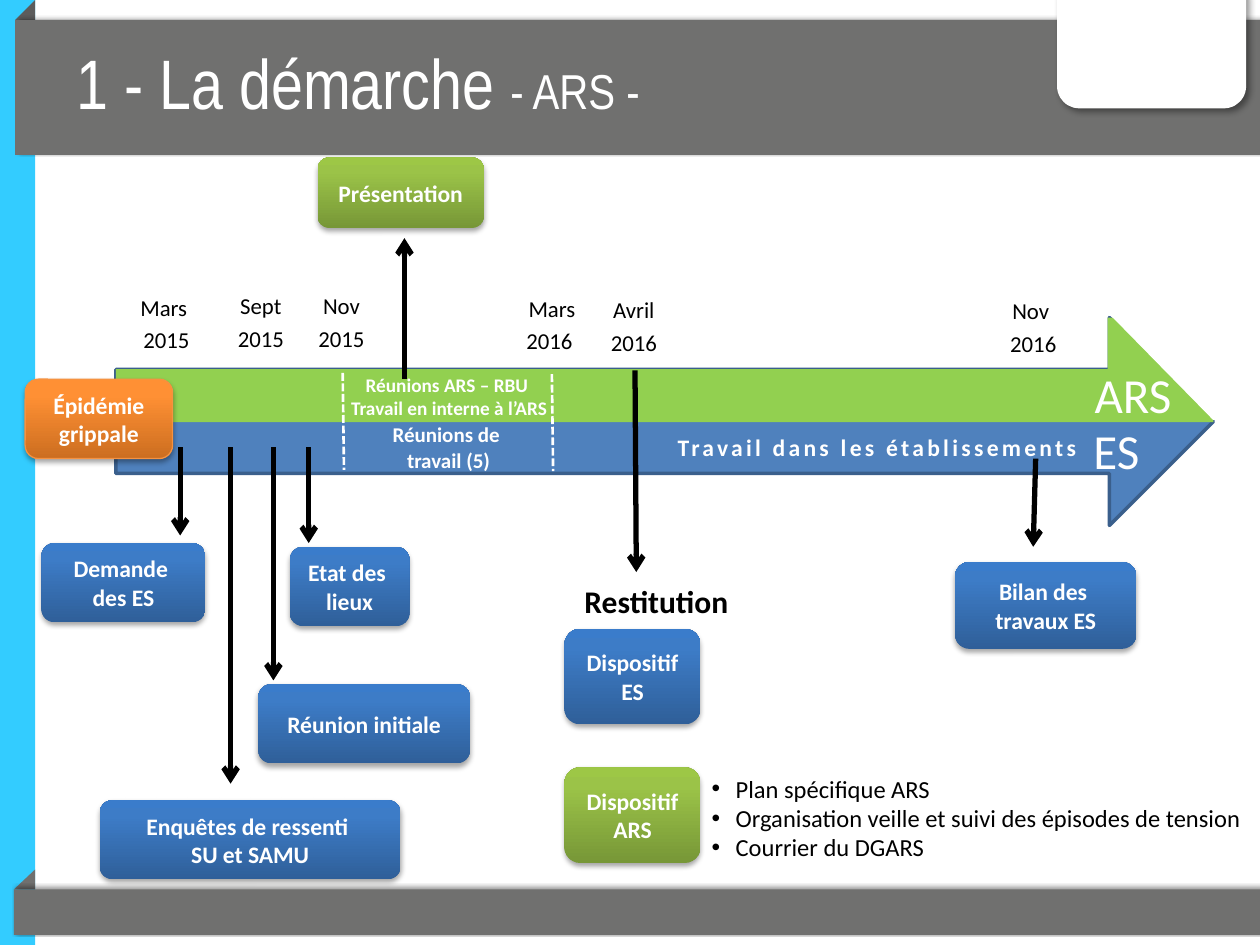
from copy import deepcopy
from lxml import etree
from pptx import Presentation, util as u
from pptx.dml.color import RGBColor
from pptx.enum import dml, shapes, text
from pptx.oxml.ns import qn

# The grid has 100 columns and 75 rows of a tenth of an inch
UNIT = u.Inches(0.1)
KIND = shapes.MSO_SHAPE
MID, TOP = text.MSO_ANCHOR.MIDDLE, text.MSO_ANCHOR.TOP
MARGIN = (1, 0.5, 1, 0.5)
SNUG = (0.7, 0.4, 0.7, 0.4)
WHITE, BLACK, GRAY, GREEN = "FFFFFF", "000000", "70706F", "92D050"
BLUES = ("2F5F99", "3D7CC7", "3A7CCB")
GREENS = ("779737", "9BC348", "9DC746")
ORANGES = ("CC6E20", "FF9034", "FF9136")
BAR_SHADE, BOX_SHADE = (41, 2, 2, 320), (35, 3.1, 1.8, 90)


def grid(*nums):
    return [round(n * UNIT) for n in nums]


def color(code):
    return RGBColor.from_string(code)


def add(parent, tag, **attrs):
    return etree.SubElement(parent, qn(tag), {k: str(v) for k, v in attrs.items()})


def style(shape, fill=None, line=None, width=2, shade=None):
    """Set fill (one colour or three stops), outline and shadow."""
    shape.shadow.inherit = False
    if fill is None:
        shape.fill.background()
    elif isinstance(fill, str):
        shape.fill.solid()
        shape.fill.fore_color.rgb = color(fill)
    else:
        shape.fill.gradient()
        shape.fill.gradient_angle = 90
        stops = shape._element.spPr.find(".//" + qn("a:gsLst"))
        stops.append(deepcopy(stops[-1]))
        for stop, code, pos in zip(shape.fill.gradient_stops, fill, (0, 0.8, 1)):
            stop.color.rgb = color(code)
            stop.position = pos
    if line:
        shape.line.color.rgb = color(line)
        shape.line.width = u.Pt(width)
    else:
        shape.line.fill.background()
    if shade:
        alpha, blur, dist, angle = shade
        effects = shape._element.spPr.find(qn("a:effectLst"))
        outer = add(effects, "a:outerShdw", blurRad=u.Pt(blur), dist=u.Pt(dist),
                    dir=angle * 60000, rotWithShape=0)
        add(add(outer, "a:srgbClr", val=BLACK), "a:alpha", val=alpha * 1000)


def block(slide, kind, at, fill=None, **look):
    shape = slide.shapes.add_shape(kind, *grid(*at))
    style(shape, fill, **look)
    return shape


def write(shape, lines, size, ink=WHITE, bold=False, center=True,
          anchor=MID, pad=SNUG, bullet=False):
    frame = shape.text_frame
    frame.word_wrap = True
    frame.vertical_anchor = anchor
    (frame.margin_left, frame.margin_top,
     frame.margin_right, frame.margin_bottom) = grid(*pad)
    frame.text = "\n".join(lines)
    for par in frame.paragraphs:
        if bullet:
            props = par._p.get_or_add_pPr()
            props.set("marL", str(grid(1.9)[0]))
            props.set("indent", str(grid(-1.9)[0]))
            add(props, "a:buFont", typeface="Arial")
            add(props, "a:buChar", char="•")
        par.alignment = text.PP_ALIGN.CENTER if center else text.PP_ALIGN.LEFT
        par.font.name, par.font.size, par.font.bold = "Calibri", u.Pt(size), bold
        par.font.color.rgb = color(ink)
    return frame


def label(slide, at, lines, size, **look):
    box = slide.shapes.add_textbox(*grid(*at))
    return write(box, lines, size, **{"anchor": TOP, "pad": MARGIN, **look})


def date(slide, left, top, width, *lines):
    frame = label(slide, (left, top, width, 8), lines, 13, ink=BLACK,
                  anchor=MID, pad=(0, 1.4, 0, 1.4))
    for par in frame.paragraphs:
        par.line_spacing = 0.9
        par.space_after = u.Pt(4.5)


def card(slide, at, fill, *lines, **look):
    shape = block(slide, KIND.ROUNDED_RECTANGLE, at, fill, shade=BOX_SHADE, **look)
    write(shape, lines, 13.5, bold=True)


def rule(slide, ends, ink=BLACK, width=3, dashed=False):
    """Draw a dashed divider, or else an arrow."""
    line = slide.shapes.add_connector(shapes.MSO_CONNECTOR.STRAIGHT, *grid(*ends))
    line.line.color.rgb = color(ink)
    line.line.width = u.Pt(width)
    if dashed:
        line.line.dash_style = dml.MSO_LINE.SQUARE_DOT
    else:
        add(line.line._get_or_add_ln(), "a:tailEnd", type="arrow")
    add(line._element.spPr, "a:effectLst")


def fold(slide, left, top, width, fill):
    """Draw the folded corner at the left end of a band."""
    low, right = top + 1.6, left + width
    path = slide.shapes.build_freeform(*grid(left, low), scale=1.0)
    path.add_line_segments([grid(right, top), grid(right, low)], close=True)
    style(path.convert_to_shape(), fill)


def frame_page(slide):
    rect = KIND.RECTANGLE
    block(slide, rect, (0, 0, 2.8, 75), "33CCFF")
    fold(slide, 1.2, 0, 1.6, "5C5C5C")
    fold(slide, 1.1, 69, 1.7, GRAY)
    block(slide, rect, (1.1, 70.6, 98.9, 3.6), GRAY, shade=BAR_SHADE)
    block(slide, rect, (1.2, 1.6, 98.8, 10.7), GRAY, shade=BAR_SHADE)
    block(slide, KIND.ROUNDED_RECTANGLE, (83.9, -1.9, 15, 10.5), WHITE,
          shade=(40, 4, 3, 45))


def head(slide):
    title = slide.shapes.title
    slide.shapes._spTree.append(title._element)
    title.left, title.top, title.width, title.height = grid(5.1, 2.1, 76.4, 8.7)
    frame = title.text_frame
    frame.auto_size = text.MSO_AUTO_SIZE.NONE
    frame.vertical_anchor = MID
    par = frame.paragraphs[0]
    par.alignment = text.PP_ALIGN.LEFT
    par.font.name = "Arial Narrow"
    par.font.color.rgb = color(WHITE)
    for words, size in (("1 - La démarche ", 40), ("- ARS -", 28)):
        run = par.add_run()
        run.text = words
        run.font.size = u.Pt(size)


def band(slide):
    # Two-tone arrow: blue below, green above
    block(slide, KIND.RIGHT_ARROW, (9.2, 25.2, 87.1, 16.5), "4F81BD", line="3A5F8C")
    block(slide, KIND.RECTANGLE, (87.9, 25.2, 6.3, 4.1), GREEN)
    block(slide, KIND.RECTANGLE, (9.2, 29.3, 87.1, 4.2), GREEN)
    edge = block(slide, KIND.ISOSCELES_TRIANGLE, (87.9, 22.2, 9.4, 10.3), WHITE,
                 line=WHITE)
    edge.adjustments[0] = 0.65
    edge.rotation = 284.9
    # Phases and their dividers
    label(slide, (29.2, 33, 12.8, 7.3), ("Réunions de ", "travail (5)"), 12, bold=True)
    label(slide, (26.5, 29.1, 18.3, 4.7),
          ("Réunions ARS – RBU ", "Travail en interne à l’ARS"), 11, bold=True)
    for left, top in ((27.2, 29.6), (43.8, 29.7)):
        rule(slide, (left, top, left + 0.1, top + 7.7), WHITE, 1.5, dashed=True)
    work = label(slide, (52.8, 33.9, 46, 3.3), ("Travail dans les établissements",),
                 13.5, bold=True, center=False)
    work.paragraphs[0].runs[0].font._element.set("spc", "190")
    label(slide, (85.9, 28.4, 8.3, 5.7), ("ARS",), 28, center=False)
    label(slide, (85.8, 32.9, 9.9, 5.7), ("ES",), 28, center=False)


def steps(slide):
    for item in ((10.6, 21.8, 5.2, "Mars ", "2015"), (18.4, 21.7, 4.6, "Sept", "2015"),
                 (24.5, 21.7, 5.2, "Nov", "2015"), (41.2, 21.9, 5.2, "Mars", "2016 "),
                 (47.7, 22, 5.2, "Avril", "2016"), (79.4, 22.1, 5.2, "Nov ", "2016")):
        date(slide, *item)
    # Arrows from the band to each step
    for x, low in ((14.3, 42.5), (18.3, 62.2), (21.7, 54), (24.5, 43.1)):
        rule(slide, (x, 35.5, x, low))
    for ends in ((32.1, 30.1, 32.1, 18.9), (50.4, 29.4, 50.5, 45.4),
                 (82.2, 36.4, 82, 43.4)):
        rule(slide, ends)
    # Step cards
    card(slide, (2, 30.1, 11.7, 6.3), ORANGES, "Épidémie grippale",
         line="F69240", width=0.75)
    card(slide, (25.2, 12.5, 13.2, 5.6), GREENS, "Présentation")
    for at, *lines in (((3.3, 43.1, 13, 6.3), "Demande ", "des ES"),
                       ((23, 43.4, 9.5, 6.3), "Etat des ", "lieux"),
                       ((20.5, 54.3, 16.8, 6.3), "Réunion initiale"),
                       ((7.9, 63.5, 23.9, 6.3), "Enquêtes de ressenti ", "SU et SAMU"),
                       ((75.8, 44.6, 14.4, 6.9), "Bilan des ", "travaux ES")):
        card(slide, at, BLUES, *lines)


def results(slide):
    area = block(slide, KIND.ROUNDED_RECTANGLE, (37.9, 44.6, 28.4, 24.4))
    write(area, ("Restitution",), 18, ink=BLACK, bold=True, anchor=TOP)
    notes = block(slide, KIND.RECTANGLE, (55.5, 60.9, 44.5, 8.1), WHITE)
    write(notes, ("Plan spécifique ARS",
                  "Organisation veille et suivi des épisodes de tension",
                  "Courrier du DGARS"), 14, ink=BLACK, center=False, anchor=TOP,
          pad=MARGIN, bullet=True)
    card(slide, (44.8, 49.9, 10.8, 7.6), BLUES, "Dispositif ES")
    card(slide, (44.8, 60.9, 10.8, 7.6), GREENS, "Dispositif ARS")


def main():
    deck = Presentation()
    deck.slide_width, deck.slide_height = grid(100, 75)
    slide = deck.slides.add_slide(deck.slide_layouts[5])
    for part in (frame_page, head, band, steps, results):
        part(slide)
    deck.save("out.pptx")


if __name__ == "__main__":
    main()
